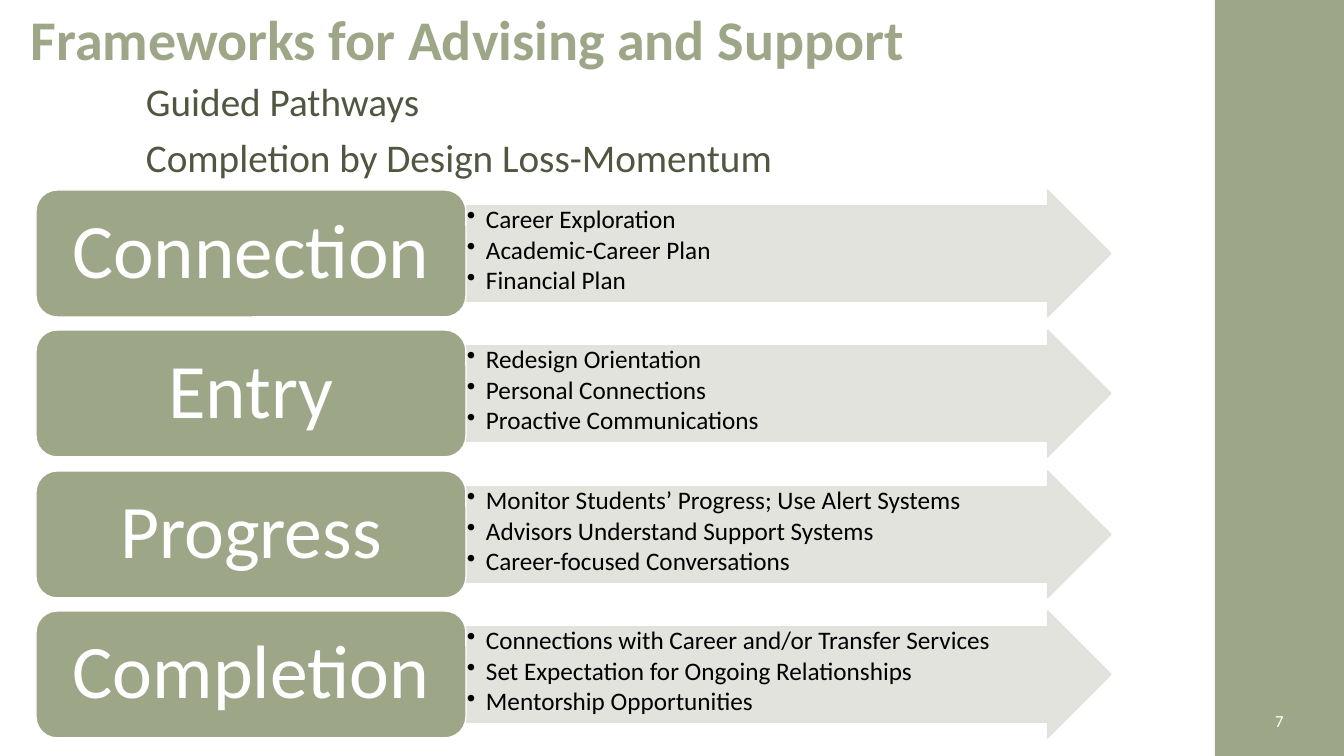
from dataclasses import dataclass

import pptx
import pptx.dml.color
import pptx.enum.shapes
import pptx.enum.text
import pptx.oxml.ns
import pptx.util
from lxml import etree

ALIGN = pptx.enum.text.PP_ALIGN
ANCHOR = pptx.enum.text.MSO_ANCHOR
SHAPE = pptx.enum.shapes.MSO_SHAPE
PX_PER_INCH = 100.8

STAGES = [
    ("Connection", 55, ["Career Exploration", "Academic-Career Plan", "Financial Plan"]),
    ("Entry", 55, ["Redesign Orientation", "Personal Connections",
                   "Proactive Communications"]),
    ("Progress", 54, ["Monitor Students’ Progress; Use Alert Systems",
                      "Advisors Understand Support Systems",
                      "Career-focused Conversations"]),
    ("Completion", 54, ["Connections with Career and/or Transfer Services",
                        "Set Expectation for Ongoing Relationships",
                        "Mentorship Opportunities"]),
]


@dataclass(frozen=True)
class Theme:
    font: str = "Calibri"
    sage: str = "9DA788"
    pale: str = "DFE1DA"
    olive: str = "505740"
    white: str = "FFFFFF"
    black: str = "000000"
    title_size: int = 40
    subtitle_size: int = 28
    bullet_size: int = 18
    number_size: int = 12


def px(count):
    return pptx.util.Emu(round(count * 914400 / PX_PER_INCH))


def rgb(value):
    return pptx.dml.color.RGBColor.from_string(value)


def set_all(target, values):
    for name, value in values.items():
        setattr(target, name, value)


class SlideBuilder:
    def __init__(self, page, theme):
        self.page = page
        self.theme = theme

    def text(self, shape, lines, size, color, bold=False, anchor=ANCHOR.TOP,
             insets=(10, 5), indent=0, bullet=False, **spacing):
        """Fill a shape with one paragraph per line; insets are (sides, top and bottom)."""
        side, edge = map(px, insets)
        frame = shape.text_frame
        set_all(frame, dict(word_wrap=True, vertical_anchor=anchor, margin_left=side,
                            margin_right=side, margin_top=edge, margin_bottom=edge))
        for index, line in enumerate(lines):
            para = frame.add_paragraph() if index else frame.paragraphs[0]
            set_all(para, {"alignment": ALIGN.LEFT, **spacing})
            properties = para._p.get_or_add_pPr()
            properties.set("marL", str(px(indent)))
            if bullet:
                properties.set("indent", str(-px(indent)))
                mark = etree.SubElement(properties, pptx.oxml.ns.qn("a:buChar"))
                mark.set("char", "•")
            span = para.add_run()
            span.text = line
            set_all(span.font, dict(name=self.theme.font, size=pptx.util.Pt(size), bold=bold))
            span.font.color.rgb = rgb(color)

    def text_box(self, left, top, width, height, *content, **style):
        box = self.page.shapes.add_textbox(*map(px, (left, top, width, height)))
        self.text(box, *content, **style)

    def shape(self, kind, left, top, width, height, fill, line=None, opacity=100):
        shape = self.page.shapes.add_shape(kind, *map(px, (left, top, width, height)))
        shape.shadow.inherit = False
        shape.fill.solid()
        shape.fill.fore_color.rgb = rgb(fill)
        if line:
            shape.line.color.rgb = rgb(line)
            shape.line.width = pptx.util.Pt(1)
        else:
            shape.line.fill.background()
        if opacity < 100:
            for color in shape._element.spPr.iter(pptx.oxml.ns.qn("a:srgbClr")):
                alpha = etree.SubElement(color, pptx.oxml.ns.qn("a:alpha"))
                alpha.set("val", str(opacity * 1000))
        return shape

    def stage(self, top, name, name_size, points):
        """Draw one row: a bulleted arrow with its rounded label on the left."""
        theme = self.theme
        arrow = self.shape(SHAPE.RIGHT_ARROW, 466, top, 645, 127, theme.pale,
                           line=theme.pale, opacity=90)
        arrow.adjustments[0] = 0.75
        self.text(arrow, points, theme.bullet_size, theme.black, insets=(1, 1), indent=19,
                  bullet=True, line_spacing=0.9, space_after=pptx.util.Pt(2.4))
        label = self.shape(SHAPE.ROUNDED_RECTANGLE, 36, top, 430, 127, theme.sage,
                           line=theme.white)
        self.text(label, [name], name_size, theme.white, anchor=ANCHOR.MIDDLE,
                  insets=(23, 11), alignment=ALIGN.CENTER, line_spacing=0.9)


def main():
    deck = pptx.Presentation()
    set_all(deck, dict(slide_width=px(1344), slide_height=px(756)))
    theme = Theme()
    builder = SlideBuilder(deck.slides.add_slide(deck.slide_layouts[6]), theme)

    builder.shape(SHAPE.RECTANGLE, 1215, 0, 129, 756, theme.sage)
    builder.text_box(21, -4, 1179, 92, ["Frameworks for Advising and Support"],
                     theme.title_size, theme.sage, bold=True, anchor=ANCHOR.MIDDLE,
                     line_spacing=0.9)
    builder.text_box(35, 72, 1165, 112,
                     ["Guided Pathways", "Completion by Design Loss-Momentum"],
                     theme.subtitle_size, theme.olive, indent=101,
                     space_before=pptx.util.Pt(6.5))
    for row, stage in enumerate(STAGES):
        builder.stage(190 + row * 281 // 2, *stage)
    builder.text_box(1215, 701, 129, 40, ["7"], theme.number_size, theme.white,
                     anchor=ANCHOR.MIDDLE, alignment=ALIGN.CENTER)

    deck.save("out.pptx")


if __name__ == "__main__":
    main()
